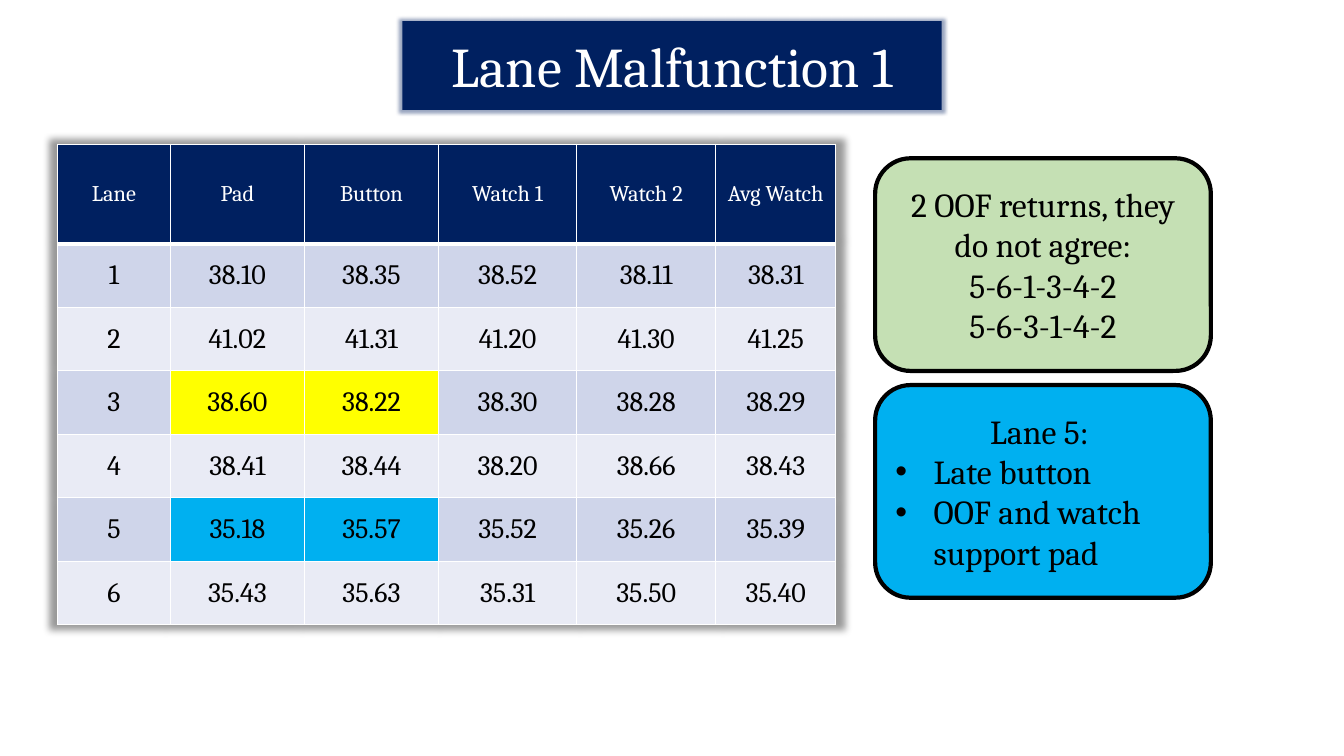
"""Build the lane malfunction slide with its timing table and two notes."""
from dataclasses import dataclass

from lxml.etree import SubElement
from pptx import Presentation
from pptx.dml.color import RGBColor
from pptx.enum.shapes import MSO_SHAPE
from pptx.enum.text import MSO_ANCHOR, PP_ALIGN
from pptx.oxml import parse_xml
from pptx.oxml.ns import nsdecls, qn
from pptx.util import Inches, Pt

FONT = "Cambria"
NAVY, BLUE, YELLOW, GREEN = "002060", "00B0F0", "FFFF00", "C5E0B4"
WHITE, BLACK = "FFFFFF", "000000"
BANDS = ("CFD5EA", "E9EBF5")
HIGHLIGHTS = {3: YELLOW, 5: BLUE}
HIGHLIGHTED_COLUMNS = (1, 2)
COLUMN_WIDTHS = (1.12, 1.33, 1.33, 1.37, 1.38, 1.19)
HEADER_HEIGHT, ROW_HEIGHT = 0.99, 0.63
TIMES = (
    ("Lane", "Pad", "Button", "Watch 1", "Watch 2", "Avg Watch"),
    ("1", "38.10", "38.35", "38.52", "38.11", "38.31"),
    ("2", "41.02", "41.31", "41.20", "41.30", "41.25"),
    ("3", "38.60", "38.22", "38.30", "38.28", "38.29"),
    ("4", "38.41", "38.44", "38.20", "38.66", "38.43"),
    ("5", "35.18", "35.57", "35.52", "35.26", "35.39"),
    ("6", "35.43", "35.63", "35.31", "35.50", "35.40"),
)
GLOW = f'<a:glow rad="63500"><a:srgbClr val="{NAVY}"><a:alpha val="40000"/></a:srgbClr></a:glow>'
TITLE_SHADOW = (
    '<a:outerShdw blurRad="50800" dist="50800" dir="5400000">'
    f'<a:srgbClr val="{WHITE}"/></a:outerShdw>'
)
TABLE_SHADOW = (
    '<a:outerShdw blurRad="63500" sx="102000" sy="102000" algn="ctr" rotWithShape="0">'
    f'<a:srgbClr val="{BLACK}"><a:alpha val="40000"/></a:srgbClr></a:outerShdw>'
)


@dataclass(frozen=True)
class Line:
    """One paragraph of a note."""

    text: str
    bullet: bool = False
    indent: float = 0


@dataclass(frozen=True)
class Note:
    """A rounded box beside the table."""

    top: float
    fill: str
    lines: tuple[Line, ...]


NOTES = (
    Note(3.82, BLUE, (
        Line("Lane 5: "),
        Line("Late button", bullet=True),
        Line("OOF and watch support pad", bullet=True),
    )),
    Note(1.57, GREEN, (
        Line("2 OOF returns, they do not agree:"),
        Line("5-6-1-3-4-2", indent=-0.22),
        Line("5-6-3-1-4-2"),
    )),
)


def paint(target, colour: str) -> None:
    """Give a fill one solid colour."""
    target.solid()
    target.fore_color.rgb = RGBColor.from_string(colour)


def effects(content: str):
    """Return an effect list holding the given effects."""
    return parse_xml(f'<a:effectLst {nsdecls("a")}>{content}</a:effectLst>')


def style(para, size: float, colour: str, align=PP_ALIGN.CENTER) -> None:
    """Set the alignment and font of a paragraph."""
    para.alignment = align
    para.font.name = FONT
    para.font.size = Pt(size)
    para.font.bold = False
    para.font.color.rgb = RGBColor.from_string(colour)


def add_title(page) -> None:
    """Turn the title placeholder into a glowing rounded banner."""
    title = page.shapes.title
    title.left, title.top = Inches(3.99), Inches(0.21)
    title.width, title.height = Inches(5.35), Inches(0.88)
    properties = title.element.spPr
    properties.append(parse_xml(
        f'<a:prstGeom {nsdecls("a")} prst="roundRect"><a:avLst/></a:prstGeom>'))
    paint(title.fill, NAVY)
    title.line.fill.background()
    properties.append(effects(GLOW + TITLE_SHADOW))
    frame = title.text_frame
    frame.text = "Lane Malfunction 1"
    frame.word_wrap = True
    frame.vertical_anchor = MSO_ANCHOR.MIDDLE
    style(frame.paragraphs[0], 40, WHITE)


def add_borders(cell, bottom: float) -> None:
    """Draw white borders round a cell."""
    properties = cell._tc.get_or_add_tcPr()
    for side, width in (("lnL", 1), ("lnR", 1), ("lnT", 1), ("lnB", bottom)):
        border = SubElement(properties, qn(f"a:{side}"), w=str(Pt(width)))
        solid = SubElement(border, qn("a:solidFill"))
        SubElement(solid, qn("a:srgbClr"), val=WHITE)


def cell_fill(row: int, column: int) -> str:
    """Choose the colour of a cell."""
    if row == 0:
        return NAVY
    if row in HIGHLIGHTS and column in HIGHLIGHTED_COLUMNS:
        return HIGHLIGHTS[row]
    return BANDS[(row - 1) % 2]


def add_times(page) -> None:
    """Add the table of lane times."""
    height = HEADER_HEIGHT + ROW_HEIGHT * (len(TIMES) - 1)
    table = page.shapes.add_table(
        len(TIMES), len(COLUMN_WIDTHS), Inches(0.57), Inches(1.43),
        Inches(sum(COLUMN_WIDTHS)), Inches(height)).table
    table._tbl.tblPr.insert(0, effects(TABLE_SHADOW))
    for column, width in zip(table.columns, COLUMN_WIDTHS):
        column.width = Inches(width)
    for row, values in enumerate(TIMES):
        header = row == 0
        table.rows[row].height = Inches(HEADER_HEIGHT if header else ROW_HEIGHT)
        for column, value in enumerate(values):
            cell = table.cell(row, column)
            cell.text = value
            cell.vertical_anchor = MSO_ANCHOR.MIDDLE
            add_borders(cell, 3 if header else 1)
            paint(cell.fill, cell_fill(row, column))
            style(cell.text_frame.paragraphs[0], 16 if header else 20,
                  WHITE if header else BLACK)


def add_note(page, note: Note) -> None:
    """Add one rounded note with its lines."""
    box = page.shapes.add_shape(
        MSO_SHAPE.ROUNDED_RECTANGLE, Inches(8.68), Inches(note.top),
        Inches(3.33), Inches(2.11))
    box.shadow.inherit = False
    paint(box.fill, note.fill)
    paint(box.line.fill, BLACK)
    box.line.width = Pt(3)
    frame = box.text_frame
    frame.word_wrap = True
    frame.vertical_anchor = MSO_ANCHOR.MIDDLE
    for index, line in enumerate(note.lines):
        para = frame.add_paragraph() if index else frame.paragraphs[0]
        para.text = line.text
        properties = para._p.get_or_add_pPr()
        if line.bullet:
            properties.set("marL", str(Inches(0.38)))
            properties.set("indent", str(Inches(-0.38)))
            SubElement(properties, qn("a:buFont"), typeface="Arial")
            SubElement(properties, qn("a:buChar"), char="•")
        elif line.indent:
            properties.set("marL", "0")
            properties.set("indent", str(Inches(line.indent)))
        style(para, 24, BLACK, PP_ALIGN.LEFT if line.bullet else PP_ALIGN.CENTER)


def main() -> None:
    """Build and save the deck."""
    deck = Presentation()
    deck.slide_width, deck.slide_height = Inches(13.33), Inches(7.5)
    page = deck.slides.add_slide(deck.slide_layouts[5])
    add_title(page)
    add_times(page)
    for note in NOTES:
        add_note(page, note)
    deck.save("out.pptx")


if __name__ == "__main__":
    main()
